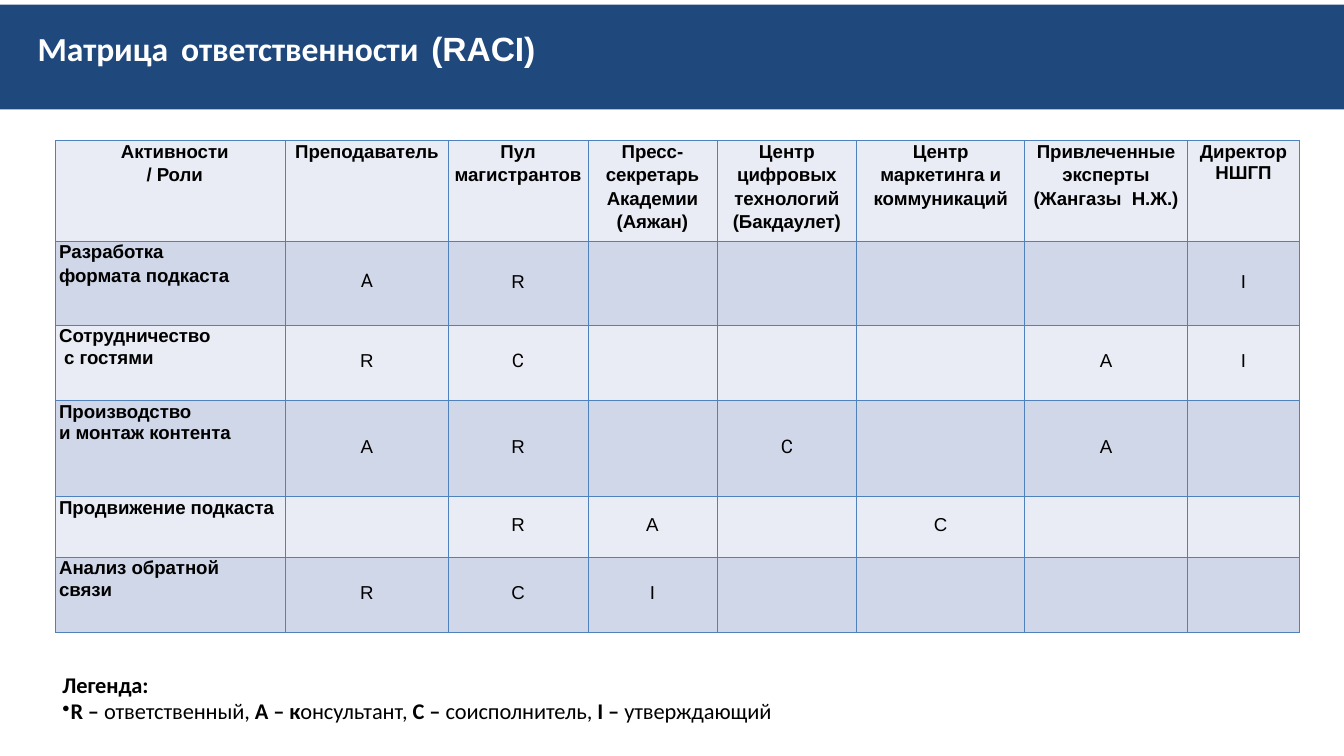
from lxml import etree
from pptx import Presentation
from pptx.dml.color import RGBColor
from pptx.enum import shapes, text
from pptx.oxml import ns
from pptx.util import Inches, Pt

NAVY, BORDER, LIGHT, DARK = "1F487C", "4F81BC", "E9ECF4", "D0D7E8"
BLACK, WHITE = "000000", "FFFFFF"

# (text, font, letter spacing in points); the spaces are widened
TITLE = [
    ("Матрица", "Calibri", -0.1), (" ", "Calibri", 5.8),
    ("ответственности", "Calibri", -0.1), (" ", "Calibri", 5.8),
    ("(RACI)", "Arial", -0.1),
]

# Each heading is a list of lines
HEADINGS = [
    ["Активности", "/ Роли"],
    ["Преподаватель"],
    ["Пул", "магистрантов"],
    ["Пресс-", "секретарь", "Академии", "(Аяжан)"],
    ["Центр", "цифровых", "технологий", "(Бакдаулет)"],
    ["Центр", "маркетинга и", "коммуникаций"],
    ["Привлеченные", "эксперты", "(Жангазы  Н.Ж.)"],
    ["Директор", "НШГП"],
]
# Activity lines, then {role column: letter}
ACTIVITIES = [
    (["Разработка", "формата подкаста"], {1: "А", 2: "R", 7: "I"}),
    (["Сотрудничество", " с гостями"], {1: "R", 2: "С", 6: "A", 7: "I"}),
    (["Производство", "и монтаж контента"], {1: "A", 2: "R", 4: "С", 6: "A"}),
    (["Продвижение подкаста"], {2: "R", 3: "A", 5: "C"}),
    (["Анализ обратной", "связи"], {1: "R", 2: "C", 3: "I"}),
]
COLUMN_WIDTHS = [3.42, 2.42, 2.08, 1.92, 2.08, 2.5, 2.42, 1.67]
ROW_HEIGHTS = [1.5, 1.25, 1.12, 1.43, 0.9, 1.12]

# (text, bold)
LEGEND = [
    ("R – ", True), ("ответственный, ", False),
    ("A – к", True), ("онсультант, ", False),
    ("C – ", True), ("соисполнитель, ", False),
    ("I – ", True), ("утверждающий", False),
]


def color(value):
    return RGBColor.from_string(value)


def style(font, size, name, value, bold=None, spacing=-0.1):
    font.size, font.name, font.bold = Pt(size), name, bold
    font.color.rgb = color(value)
    font._element.set("spc", str(round(spacing * 100)))


def add_child(parent, tag, **attributes):
    child = etree.SubElement(parent, ns.qn(tag))
    for key, value in attributes.items():
        child.set(key, str(value))
    return child


def indent(paragraph, left, first=0):
    properties = paragraph._p.get_or_add_pPr()
    properties.set("marL", str(Inches(left)))
    properties.set("indent", str(Inches(first)))
    return properties


def add_text_box(slide, left, top, width, height):
    frame = slide.shapes.add_textbox(
        Inches(left), Inches(top), Inches(width), Inches(height)).text_frame
    frame.word_wrap = True
    frame.margin_left = frame.margin_right = frame.margin_bottom = 0
    frame.margin_top = Inches(0.01)
    return frame


def format_cell(cell, fill):
    cell.margin_left = cell.margin_right = cell.margin_bottom = 0
    cell.margin_top = Inches(0.01)
    properties = cell._tc.get_or_add_tcPr()
    for side in ("a:lnL", "a:lnR", "a:lnT", "a:lnB"):
        line = add_child(properties, side, w=Pt(1))
        add_child(add_child(line, "a:solidFill"), "a:srgbClr", val=BORDER)
    cell.fill.solid()
    cell.fill.fore_color.rgb = color(fill)


def write_lines(cell, lines, alignment, left, spacing):
    frame = cell.text_frame
    frame.text = "\n".join(lines)
    for number, paragraph in enumerate(frame.paragraphs):
        paragraph.alignment = alignment
        paragraph.space_before = Pt(spacing if number else 0.8)
        indent(paragraph, left)
        style(paragraph.font, 20, "Arial", BLACK, True)


presentation = Presentation()
presentation.slide_width, presentation.slide_height = Inches(20), Inches(11.25)
slide = presentation.slides.add_slide(presentation.slide_layouts[6])

# Title band
band = slide.shapes.add_shape(
    shapes.MSO_SHAPE.RECTANGLE, 0, Inches(0.07), Inches(20), Inches(1.56))
band.shadow.inherit = False
band.fill.solid()
band.fill.fore_color.rgb = color(NAVY)
band.line.fill.background()

title = add_text_box(slide, 0.55, 0.41, 7.45, 0.63).paragraphs[0]
title.space_before = Pt(1)
indent(title, 0.01)
for words, font_name, spacing in TITLE:
    run = title.add_run()
    run.text = words
    style(run.font, 36, font_name, WHITE, True, spacing)

# Responsibility matrix
table = slide.shapes.add_table(
    len(ROW_HEIGHTS), len(COLUMN_WIDTHS), Inches(0.83), Inches(2.09),
    Inches(sum(COLUMN_WIDTHS)), Inches(sum(ROW_HEIGHTS))).table
for column, width in zip(table.columns, COLUMN_WIDTHS):
    column.width = Inches(width)
for number, (row, height) in enumerate(zip(table.rows, ROW_HEIGHTS)):
    row.height = Inches(height)
    for cell in row.cells:
        format_cell(cell, DARK if number % 2 else LIGHT)

for column, lines in enumerate(HEADINGS):
    last = column == len(HEADINGS) - 1
    write_lines(table.cell(0, column), lines, text.PP_ALIGN.CENTER,
                0 if column else 0.12, 0.8 if last else 3)

for row, (lines, letters) in enumerate(ACTIVITIES, 1):
    write_lines(table.cell(row, 0), lines, text.PP_ALIGN.LEFT,
                0.05, 3 if row == 1 else 0.8)
    for column in range(1, len(COLUMN_WIDTHS)):
        cell = table.cell(row, column)
        cell.vertical_anchor = text.MSO_ANCHOR.MIDDLE
        cell.margin_bottom = Inches(0.06)
        letter = letters.get(column, "")
        cell.text = letter
        paragraph = cell.text_frame.paragraphs[0]
        paragraph.alignment = text.PP_ALIGN.CENTER
        # Cyrillic letters are set in Roboto, Latin ones in Arial
        style(paragraph.font, 20, "Roboto" if letter in ("А", "С") else "Arial",
              BLACK, False)

# Legend
frame = add_text_box(slide, 0.92, 9.97, 10.66, 0.82)
heading = frame.paragraphs[0]
heading.text = "Легенда:"
heading.space_before = Pt(1)
indent(heading, 0.01)
style(heading.font, 24, "Calibri", BLACK, True)

entry = frame.add_paragraph()
properties = indent(entry, 0.13, -0.12)
add_child(properties, "a:buSzPct", val=96000)
add_child(properties, "a:buChar", char="•")
for words, bold in LEGEND:
    run = entry.add_run()
    run.text = words
    style(run.font, 24, "Calibri", BLACK, bold)

presentation.save("out.pptx")
